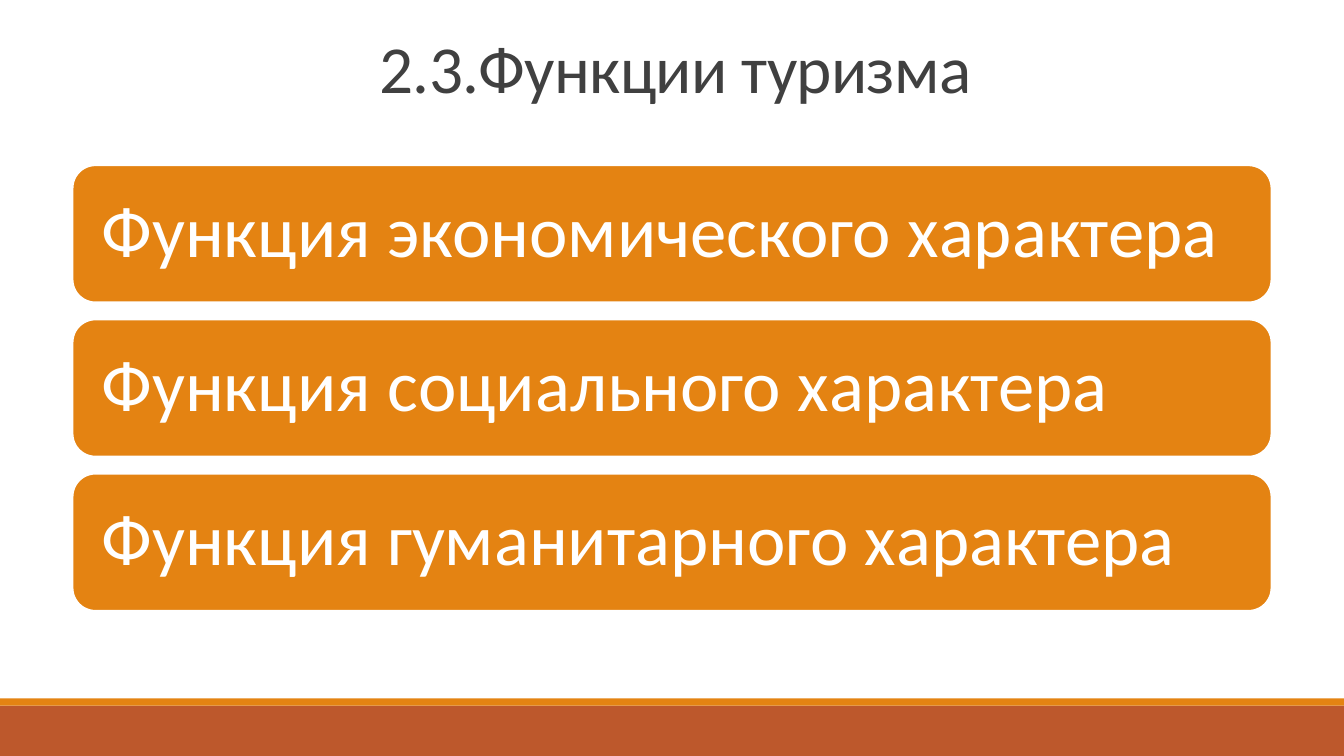
from pptx import Presentation
from pptx.dml.color import RGBColor
from pptx.enum.shapes import MSO_SHAPE
from pptx.enum.text import MSO_ANCHOR, PP_ALIGN
from pptx.util import Inches, Pt

RECTANGLE = MSO_SHAPE.RECTANGLE
ROUNDED = MSO_SHAPE.ROUNDED_RECTANGLE
MIDDLE, BOTTOM = MSO_ANCHOR.MIDDLE, MSO_ANCHOR.BOTTOM
LEFT, CENTER = PP_ALIGN.LEFT, PP_ALIGN.CENTER

ORANGE, RUST, WHITE, GRAY = "E48312", "BD582C", "FFFFFF", "404040"
WIDTH, HEIGHT = 13.33, 7.5
FUNCTIONS = [
    "Функция экономического характера",
    "Функция социального характера",
    "Функция гуманитарного характера",
]


def color(value):
    return RGBColor.from_string(value)


def add_block(page, kind, box, fill):
    block = page.shapes.add_shape(kind, *map(Inches, box))
    block.shadow.inherit = False
    block.fill.solid()
    block.fill.fore_color.rgb = color(fill)
    block.line.fill.background()
    return block


def write(frame, text, size, ink, align, anchor, spacing):
    frame.word_wrap = True
    frame.vertical_anchor = anchor
    para = frame.paragraphs[0]
    para.alignment = align
    para.line_spacing = spacing
    para.font.name = "Calibri"
    para.font.size = Pt(size)
    para.font.color.rgb = color(ink)
    span = para.add_run()
    span.text = text
    return span


def add_footer(page, box):
    left, top, width, height = box
    stripe = 0.07
    add_block(page, RECTANGLE, (left, top + stripe, width, height - stripe), RUST)
    add_block(page, RECTANGLE, (left, top, width, stripe), ORANGE)


def add_title(page, box, text):
    title = page.shapes.add_textbox(*map(Inches, box))
    span = write(title.text_frame, text, 48, GRAY, CENTER, BOTTOM, 0.85)
    span.font._element.set("spc", "-50")


def add_function_list(page, box, labels, gap=0.17):
    left, top, width, height = box
    bar_height = (height - gap * (len(labels) - 1)) / len(labels)
    for index, label in enumerate(labels):
        bar_top = top + index * (bar_height + gap)
        bar = add_block(page, ROUNDED, (left, bar_top, width, bar_height), ORANGE)
        bar.line.color.rgb = color(WHITE)
        bar.line.width = Pt(1.25)
        frame = bar.text_frame
        frame.margin_left = frame.margin_right = Inches(0.22)
        frame.margin_top = frame.margin_bottom = Inches(0.22)
        write(frame, label, 52, WHITE, LEFT, MIDDLE, 0.9)


def main():
    deck = Presentation()
    deck.slide_width, deck.slide_height = Inches(WIDTH), Inches(HEIGHT)
    page = deck.slides.add_slide(deck.slide_layouts[6])
    add_footer(page, (0, 6.93, WIDTH, 0.57))
    add_title(page, (1.2, -0.48, 11, 1.59), "2.3.Функции туризма")
    add_function_list(page, (0.72, 1.64, 11.89, 4.42), FUNCTIONS)
    deck.save("out.pptx")


if __name__ == "__main__":
    main()
